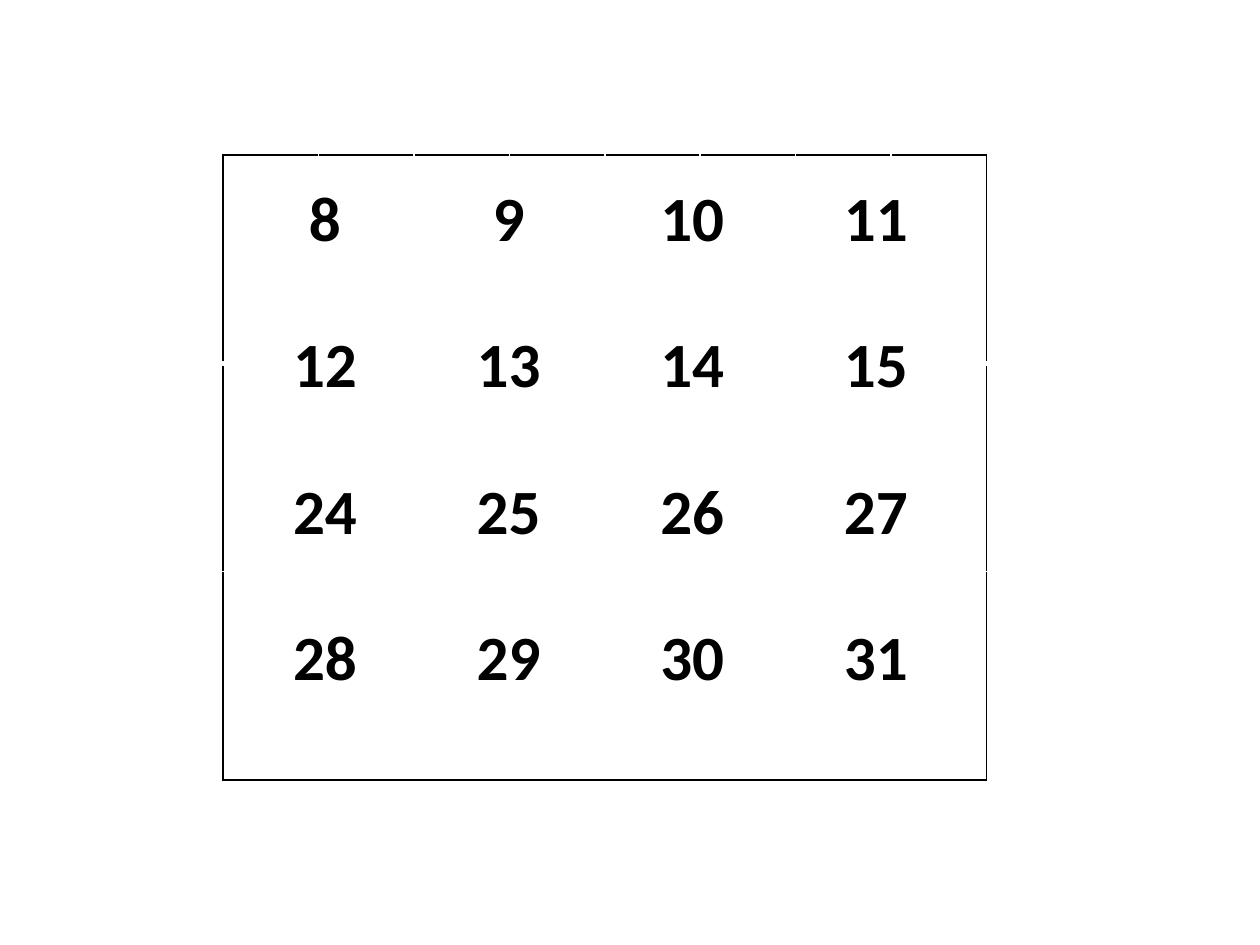
from dataclasses import dataclass

from lxml import etree
from pptx import Presentation
from pptx.dml.color import RGBColor
from pptx.enum.text import PP_ALIGN
from pptx.oxml.ns import qn
from pptx.util import Inches, Pt

CENTER = PP_ALIGN.CENTER


@dataclass(frozen=True)
class Theme:
    ink: str = "000000"
    paper: str = "FFFFFF"
    font: str = "Calibri"
    number_size: int = 36
    thin: int = 1
    thick: int = 3


theme = Theme()


def add_grid(slide, rows, cols, left, top, width, height):
    """Add a table of equal cells without banding."""
    grid = slide.shapes.add_table(rows, cols, Inches(left), Inches(top),
                                  Inches(width), Inches(height)).table
    grid.horz_banding = False
    for column in grid.columns:
        column.width = Inches(width / cols)
    for row in grid.rows:
        row.height = Inches(height / rows)
    return grid


def style_cell(cell, row, outer=()):
    """Leave the cell clear, with ink on outer sides and paper on the others."""
    properties = cell._tc.get_or_add_tcPr()
    for side in "LRTB":
        # The rule under the first row is the heavy one
        heavy = (row == 0 and side == "B") or (row == 1 and side == "T")
        weight = theme.thick if heavy and row == 0 else theme.thin
        line = etree.SubElement(properties, qn(f"a:ln{side}"), w=str(Pt(weight)))
        fill = etree.SubElement(line, qn("a:solidFill"))
        etree.SubElement(fill, qn("a:srgbClr"),
                         val=theme.ink if side in outer else theme.paper)
    cell.fill.background()


prs = Presentation()
prs.slide_width, prs.slide_height = Inches(10), Inches(7.5)
slide = prs.slides.add_slide(prs.slide_layouts[6])

# Outer frame: an empty grid, inked along its outside edge only
FRAME_ROWS, FRAME_COLS = 3, 8
frame = add_grid(slide, FRAME_ROWS, FRAME_COLS, 1.77, 1.23, 6.06, 4.96)
for r in range(FRAME_ROWS):
    for c in range(FRAME_COLS):
        edges = {"L": c == 0, "R": c == FRAME_COLS - 1,
                 "T": r == 0, "B": r == FRAME_ROWS - 1}
        style_cell(frame.cell(r, c), r, [side for side, on in edges.items() if on])

# Numbers: four in each row, counted up from the row's first number
ROW_STARTS = (8, 12, 24, 28)
NUMBER_COLS = 4
numbers = add_grid(slide, len(ROW_STARTS), NUMBER_COLS, 1.85, 1.39, 5.83, 4.65)
for r, start in enumerate(ROW_STARTS):
    for c in range(NUMBER_COLS):
        cell = numbers.cell(r, c)
        style_cell(cell, r)
        cell.text = str(start + c)
        number = cell.text_frame.paragraphs[0]
        number.alignment = CENTER
        number.font.name = theme.font
        number.font.size = Pt(theme.number_size)
        number.font.bold = True
        number.font.color.rgb = RGBColor.from_string(theme.ink)

prs.save("out.pptx")
